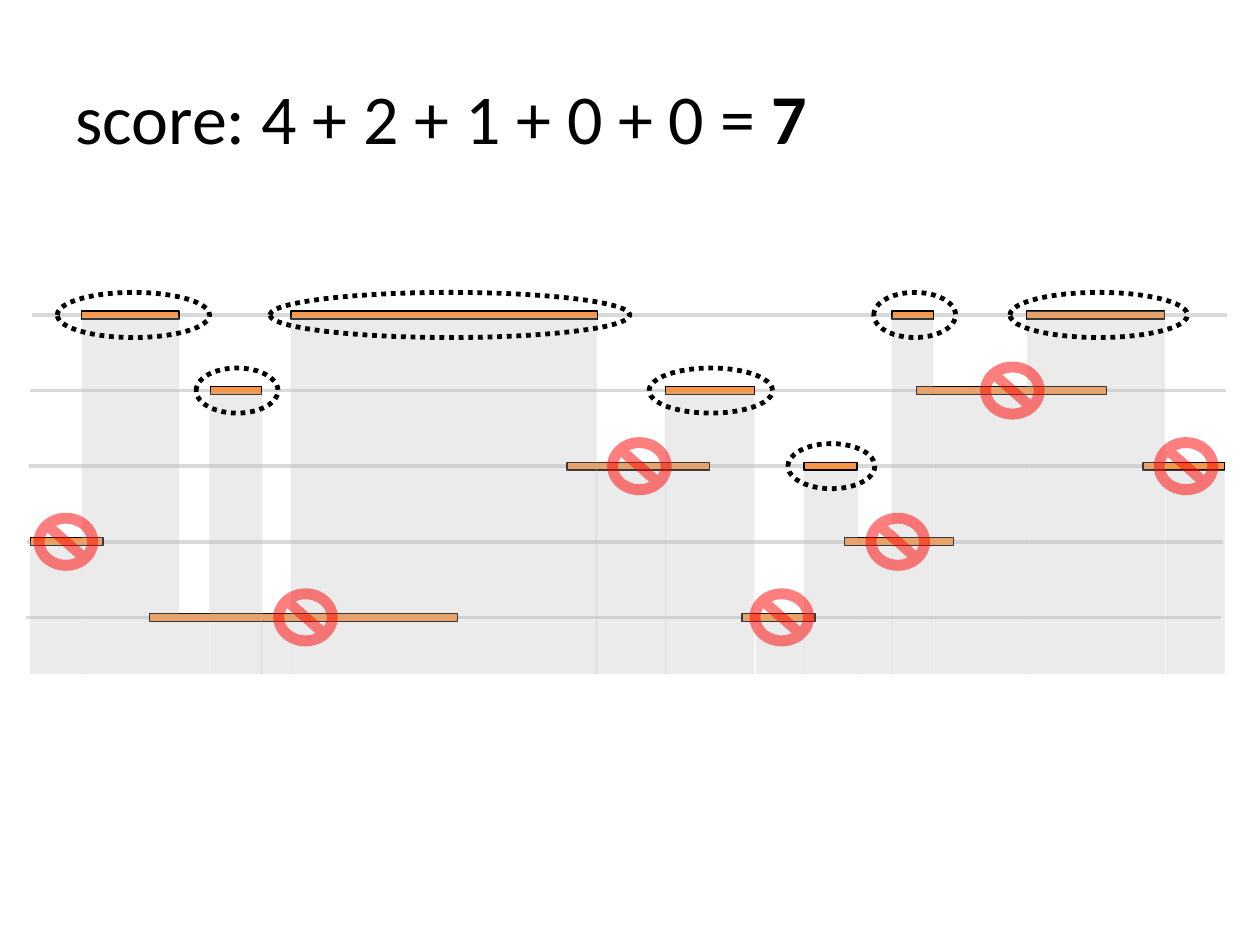
from lxml import etree
from pptx import Presentation
from pptx import util as u
from pptx.dml.color import RGBColor
from pptx.enum import dml, shapes, text
from pptx.oxml.ns import qn

BLACK = RGBColor(0x00, 0x00, 0x00)
ORANGE = RGBColor(0xF7, 0x96, 0x46)
TRACK_GREY = RGBColor(0xD9, 0xD9, 0xD9)
SHADE_GREY = RGBColor(0xBF, 0xBF, 0xBF)
RED = RGBColor(0xFF, 0x00, 0x00)

# Lengths in centimetres
ROW_Y = [6.35 + 1.524 * row for row in range(5)]
BAR_HEIGHT = 0.16
SHADE_BOTTOM = 13.59
RING_HEIGHT = 0.91
SIGN_WIDTH, SIGN_HEIGHT = 1.3, 1.17

presentation = Presentation()
presentation.slide_width, presentation.slide_height = u.Cm(25.4), u.Cm(19.05)
slide = presentation.slides.add_slide(presentation.slide_layouts[5])


def add_shape(kind, left, top, width, height, fill=None, opacity=100, line_width=0):
    shape = slide.shapes.add_shape(
        kind, u.Cm(left), u.Cm(top), u.Cm(width), u.Cm(height))
    shape.shadow.inherit = False
    if fill is None:
        shape.fill.background()
    else:
        shape.fill.solid()
        shape.fill.fore_color.rgb = fill
        if opacity < 100:
            color = shape.fill._xPr.find(qn("a:solidFill"))[0]
            etree.SubElement(color, qn("a:alpha")).set("val", str(opacity * 1000))
    if line_width:
        shape.line.color.rgb = BLACK
        shape.line.width = u.Pt(line_width)
    else:
        shape.line.fill.background()
    return shape


def add_bar(left, width, row):
    add_shape(shapes.MSO_SHAPE.RECTANGLE, left, ROW_Y[row] - BAR_HEIGHT / 2,
              width, BAR_HEIGHT, ORANGE, line_width=0.75)


# Title
title = slide.shapes.title
title.left, title.top = u.Cm(1.27), u.Cm(0.76)
title.width, title.height = u.Cm(22.86), u.Cm(3.18)
title.text_frame.vertical_anchor = text.MSO_ANCHOR.MIDDLE
paragraph = title.text_frame.paragraphs[0]
paragraph.alignment = text.PP_ALIGN.LEFT
for words, bold in (("score: 4 + 2 + 1 + 0 + 0 = ", False), ("7", True)):
    run = paragraph.add_run()
    run.text = words
    run.font.name, run.font.size, run.font.bold = "Calibri", u.Pt(40), bold
    run.font.color.rgb = BLACK

# Tracks, each starting slightly further left
for row, y in enumerate(ROW_Y):
    left = 0.64 - 0.03 * row
    track = slide.shapes.add_connector(
        shapes.MSO_CONNECTOR.STRAIGHT, u.Cm(left), u.Cm(y), u.Cm(left + 24.1), u.Cm(y))
    track.line.color.rgb = TRACK_GREY
    track.line.width = u.Pt(2)
    etree.SubElement(track._element.spPr, qn("a:effectLst"))

# Interval bars: left, width, row
for bar in (
    (1.65, 1.96, 0), (5.87, 6.17, 0), (17.98, 0.84, 0), (20.7, 2.77, 0),
    (4.24, 1.04, 1), (13.41, 1.8, 1), (18.47, 3.84, 1),
    (11.43, 2.87, 2), (23.04, 1.65, 2),
    (0.61, 1.47, 3), (17.02, 2.21, 3),
    (3.02, 6.2, 4), (14.96, 1.47, 4),
):
    add_bar(*bar)

# Shaded columns down to a common floor: left, width, top
for left, width, top in (
    (1.65, 1.96, 6.36), (5.87, 6.17, 6.36), (17.98, 0.84, 6.36), (20.7, 2.79, 6.27),
    (4.22, 1.07, 7.9), (13.41, 1.8, 7.9), (18.82, 1.88, 7.8),
    (12.01, 1.42, 9.3), (16.21, 1.09, 9.3), (23.5, 1.19, 9.47),
    (0.61, 1.04, 10.9), (17.3, 0.69, 10.87),
    (3.61, 0.61, 12.37), (5.26, 0.61, 12.37), (15.24, 0.97, 12.37),
):
    add_shape(shapes.MSO_SHAPE.RECTANGLE, left, top, width, SHADE_BOTTOM - top,
              SHADE_GREY, opacity=30)

# This chosen bar lies above its shade
add_bar(16.21, 1.07, 2)

# Dotted rings around chosen intervals: centre, width, row
for center, width, row in (
    (2.69, 3.07, 0), (9.07, 7.26, 0), (18.44, 1.65, 0), (22.15, 3.58, 0),
    (4.78, 1.65, 1), (14.33, 2.49, 1), (16.76, 1.75, 2),
):
    ring = add_shape(shapes.MSO_SHAPE.OVAL, center - width / 2,
                     ROW_Y[row] - RING_HEIGHT / 2, width, RING_HEIGHT, line_width=2.75)
    ring.line.dash_style = dml.MSO_LINE.ROUND_DOT

# Prohibition signs on rejected intervals: centre, row
for center, row in ((20.41, 1), (12.89, 2), (23.91, 2), (1.33, 3),
                    (18.1, 3), (6.16, 4), (15.76, 4)):
    add_shape(shapes.MSO_SHAPE.NO_SYMBOL, center - SIGN_WIDTH / 2,
              ROW_Y[row] - SIGN_HEIGHT / 2, SIGN_WIDTH, SIGN_HEIGHT, RED, opacity=50)

presentation.save("out.pptx")
